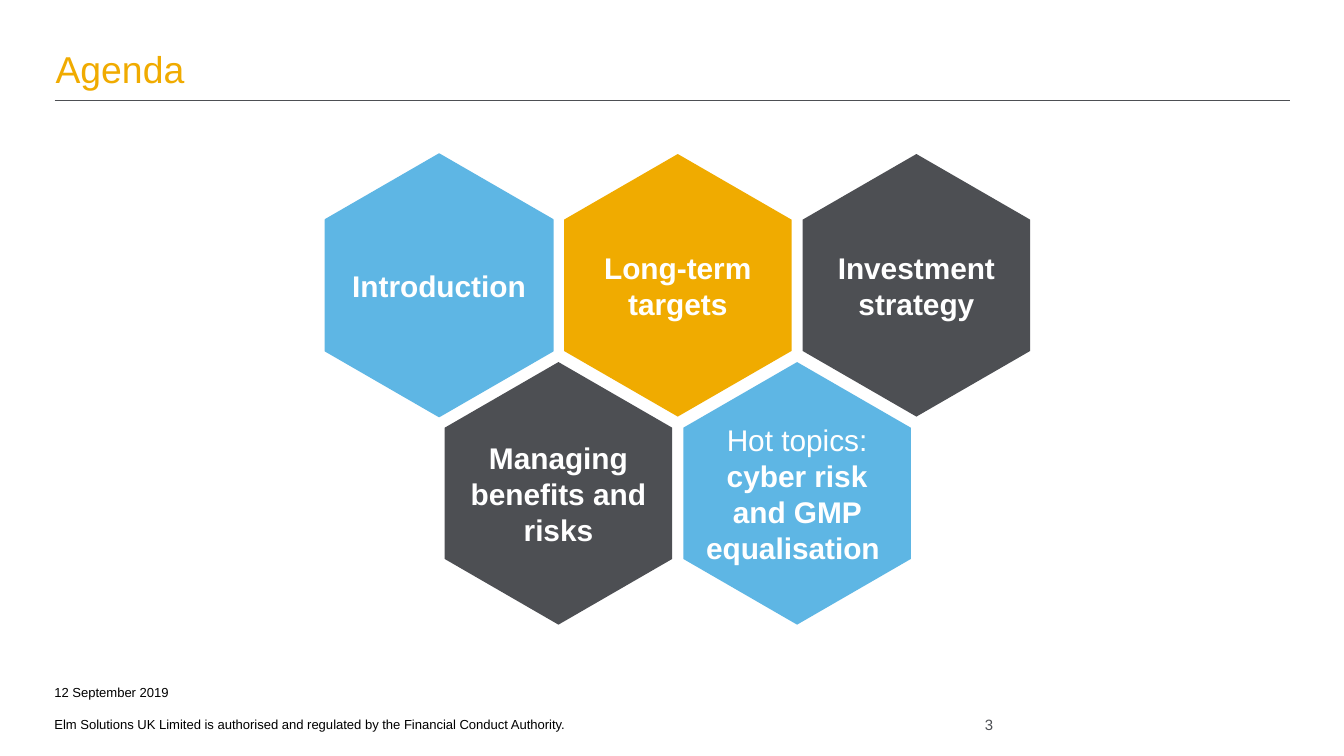
"""Build the agenda slide with five interlocking hexagons."""
import pptx
import pptx.dml.color
import pptx.enum.shapes
import pptx.enum.text
import pptx.util
from lxml import etree

Cm = pptx.util.Cm
Pt = pptx.util.Pt
RGBColor = pptx.dml.color.RGBColor
PP_ALIGN = pptx.enum.text.PP_ALIGN
MSO_ANCHOR = pptx.enum.text.MSO_ANCHOR

AMBER = RGBColor(0xF0, 0xAB, 0x00)
BLUE = RGBColor(0x5E, 0xB6, 0xE4)
GREY = RGBColor(0x4D, 0x4F, 0x53)
WHITE = RGBColor(0xFF, 0xFF, 0xFF)
BLACK = RGBColor(0x00, 0x00, 0x00)


def add_run(p, text, size, color, bold=False):
    r = p.add_run()
    r.text = text
    r.font.name = "Arial"
    r.font.size = Pt(size)
    r.font.bold = bold
    r.font.color.rgb = color


def add_box(s, left, top, width, height):
    tf = s.shapes.add_textbox(Cm(left), Cm(top), Cm(width), Cm(height)).text_frame
    tf.margin_left = tf.margin_right = tf.margin_top = tf.margin_bottom = 0
    tf.word_wrap = True
    tf.vertical_anchor = MSO_ANCHOR.BOTTOM
    return tf


prs = pptx.Presentation()
prs.slide_width = Cm(25.4)
prs.slide_height = Cm(14.28)
s = prs.slides.add_slide(prs.slide_layouts[6])

rule = s.shapes.add_connector(
    pptx.enum.shapes.MSO_CONNECTOR.STRAIGHT, Cm(1.03), Cm(1.9), Cm(24.38), Cm(1.9)
)
rule.line.color.rgb = GREY
rule.line.width = Pt(0.75)
etree.SubElement(rule._element.spPr, pptx.oxml.ns.qn("a:effectLst"))

p = add_box(s, 17.78, 13.51, 0.99, 0.34).paragraphs[0]
p.alignment = PP_ALIGN.RIGHT
add_run(p, "3", 8, GREY)

tf = add_box(s, 1.03, 12.62, 16.76, 1.2)
add_run(tf.paragraphs[0], "12 September 2019", 7, BLACK)
p = tf.add_paragraph()
p.space_before = Pt(8.5)
add_run(
    p,
    "Elm Solutions UK Limited is authorised and regulated by the Financial Conduct Authority.",
    7,
    BLACK,
)

p = add_box(s, 1.05, 0.64, 23.37, 1.09).paragraphs[0]
p.line_spacing = 0.9
add_run(p, "Agenda", 20, AMBER)

HEX_W, HEX_H = 4.3, 4.96
PITCH_X, PITCH_Y = 4.51, 3.93
LEFT, TOP = 6.15, 2.91
OUTLINE = [(1, 0.75), (0.5, 1), (0, 0.75), (0, 0.25), (0.5, 0), (1, 0.25)]

topics = [
    (0.5, 1, GREY, [("Managing benefits and risks", True)]),
    (1.5, 1, BLUE, [("Hot topics: ", False), ("cyber risk and GMP equalisation ", True)]),
    (0, 0, BLUE, [("Introduction", True)]),
    (1, 0, AMBER, [("Long-term targets", True)]),
    (2, 0, GREY, [("Investment strategy", True)]),
]

for col, row, color, runs in topics:
    left, top = LEFT + col * PITCH_X, TOP + row * PITCH_Y
    points = [(Cm(left + x * HEX_W), Cm(top + y * HEX_H)) for x, y in OUTLINE]
    builder = s.shapes.build_freeform(*points[0])
    builder.add_line_segments(points[1:], close=True)
    sp = builder.convert_to_shape()
    sp.shadow.inherit = False
    sp.fill.solid()
    sp.fill.fore_color.rgb = color
    if (col, row) == (0, 0):
        sp.line.color.rgb = color
        sp.line.width = Pt(0.75)
    else:
        sp.line.fill.background()
    tf = sp.text_frame
    tf.word_wrap = True
    tf.vertical_anchor = MSO_ANCHOR.MIDDLE
    tf.margin_left = tf.margin_right = Cm(0.3)
    p = tf.paragraphs[0]
    p.alignment = PP_ALIGN.CENTER
    for text, bold in runs:
        add_run(p, text, 16, WHITE, bold)

prs.save("out.pptx")
